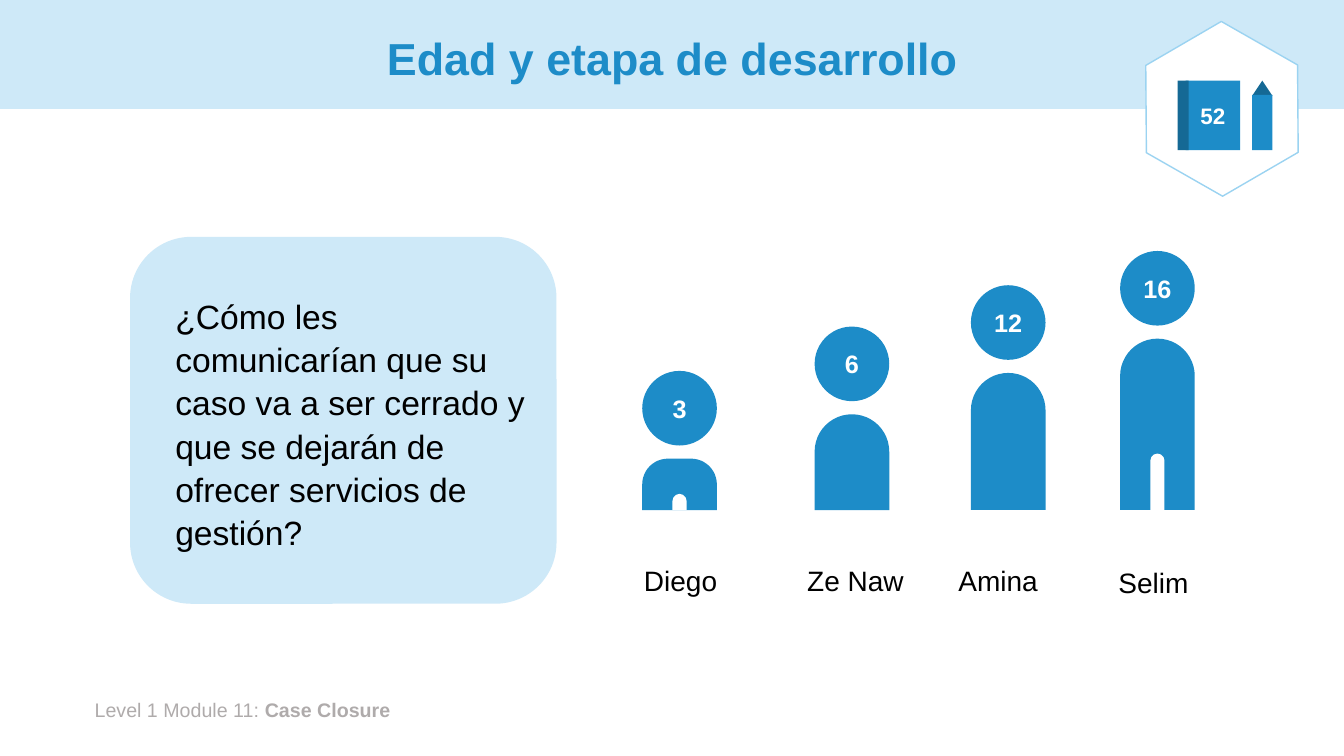
from pptx import Presentation
from pptx import util as u
from pptx.dml.color import RGBColor
from pptx.enum import shapes, text

BLUE, DARK, PALE, WHITE = "1D8CC8", "156995", "CEE9F8", "FFFFFF"
SHAPE = shapes.MSO_SHAPE
FEET = 5.06


def rgb(value):
    """Return a colour from a hex string."""
    return RGBColor.from_string(value)


def add_shape(s, kind, box, fill, line=None, adj=()):
    """Add a flat filled shape, outlined only when a line colour is given."""
    sp = s.shapes.add_shape(kind, *map(u.Inches, box))
    sp.shadow.inherit = False
    sp.fill.solid()
    sp.fill.fore_color.rgb = rgb(fill)
    if line:
        sp.line.color.rgb = rgb(line)
        sp.line.width = u.Pt(1)
    else:
        sp.line.fill.background()
    for i, value in enumerate(adj):
        sp.adjustments[i] = value
    return sp


def write(sp, runs, size, color, align=None, middle=False, spacing=None, after=None, wrap=True):
    """Fill a shape with one paragraph of (text, bold) runs."""
    tf = sp.text_frame
    tf.word_wrap = wrap
    tf.vertical_anchor = text.MSO_ANCHOR.MIDDLE if middle else text.MSO_ANCHOR.TOP
    p = tf.paragraphs[0]
    p.alignment = align
    p.line_spacing = spacing
    if after is not None:
        p.space_after = u.Pt(after)
    for words, bold in runs:
        r = p.add_run()
        r.text = words
        r.font.name = "Arial"
        r.font.size = u.Pt(size)
        r.font.bold = bold
        r.font.color.rgb = rgb(color)


def add_text(s, box, runs, size, color, **style):
    """Add a text box holding one paragraph."""
    write(s.shapes.add_textbox(*map(u.Inches, box)), runs, size, color, **style)


def add_header(s, box):
    """Draw the title band with its centred title."""
    left, top, width, height = box
    add_shape(s, SHAPE.RECTANGLE, box, PALE)
    add_text(s, (left + 0.92, top + 0.13, width - 1.83, height - 0.13),
             [("Edad y etapa de desarrollo", True)], 32, BLUE,
             align=text.PP_ALIGN.CENTER, middle=True, spacing=0.9)


def add_question(s, box):
    """Draw the rounded panel with the question."""
    left, top, width, height = box
    add_shape(s, SHAPE.ROUNDED_RECTANGLE, box, PALE)
    question = ("¿Cómo les comunicarían que su caso va a ser cerrado y "
                "que se dejarán de ofrecer servicios de gestión?")
    add_text(s, (left + 0.35, top + 0.51, width - 0.54, height - 0.98),
             [(question, False)], 24, "000000", spacing=1.07, after=8)


def add_child(s, box, age, leg_gap):
    """Draw a figure with its age in the head and an optional gap between the legs."""
    left, top, width, height = box
    add_shape(s, SHAPE.ROUND_2_SAME_RECTANGLE,
              (left, top + 0.87, width, height - 0.87), BLUE, adj=(0.5, 0))
    head = add_shape(s, SHAPE.OVAL, (left, top, width, width), BLUE)
    write(head, [(age, True)], 18, WHITE, align=text.PP_ALIGN.CENTER, middle=True)
    if leg_gap:
        add_shape(s, SHAPE.ROUND_2_SAME_RECTANGLE,
                  (left + 0.3, top + height - leg_gap, 0.14, leg_gap), WHITE, adj=(0.5, 0))


def add_badge(s, box, page):
    """Draw the hexagon badge with a numbered book and a pencil."""
    left, top, width, height = box
    hexagon = add_shape(s, SHAPE.HEXAGON, box, WHITE, "9BD3F1", (0.29,))
    hexagon.rotation = 29.7
    x, y = left + 0.43, top + 0.47
    book = add_shape(s, SHAPE.RECTANGLE, (x + 0.08, y, 0.54, 0.69), BLUE)
    write(book, [(page, True)], 16, WHITE, align=text.PP_ALIGN.CENTER, middle=True, wrap=False)
    add_shape(s, SHAPE.RECTANGLE, (x, y, 0.11, 0.69), DARK)
    add_shape(s, SHAPE.ISOSCELES_TRIANGLE, (x + 0.74, y, 0.2, 0.15), DARK)
    add_shape(s, SHAPE.RECTANGLE, (x + 0.74, y + 0.14, 0.2, 0.55), BLUE)


def main():
    """Build and save the slide."""
    prs = Presentation()
    prs.slide_width, prs.slide_height = u.Inches(13.33), u.Inches(7.5)
    s = prs.slides.add_slide(prs.slide_layouts[6])
    add_header(s, (0, 0, 13.33, 1.08))
    add_text(s, (0.84, 6.87, 4.55, 0.34),
             [("Level 1 Module 11: ", False), ("Case Closure", True)], 14, "AFABAB")
    add_question(s, (1.29, 2.35, 4.23, 3.64))
    children = [
        ("Diego", "3", 6.37, 3.68, 0.16, (6.2, 5.52, 1.1, 0.45)),
        ("Ze Naw", "6", 8.08, 3.24, 0, (7.88, 5.52, 1.21, 0.45)),
        ("Amina", "12", 9.63, 2.83, 0, (9.35, 5.52, 1.1, 0.45)),
        ("Selim", "16", 11.11, 2.49, 0.56, (10.89, 5.54, 1.1, 0.45)),
    ]
    for name, age, left, top, leg_gap, label in children:
        add_child(s, (left, top, 0.74, FEET - top), age, leg_gap)
        add_text(s, label, [(name, False)], 20, "000000",
                 align=text.PP_ALIGN.CENTER, spacing=1.07, after=8)
    add_badge(s, (11.25, 0.33, 1.74, 1.5), "52")
    prs.save("out.pptx")


if __name__ == "__main__":
    main()
